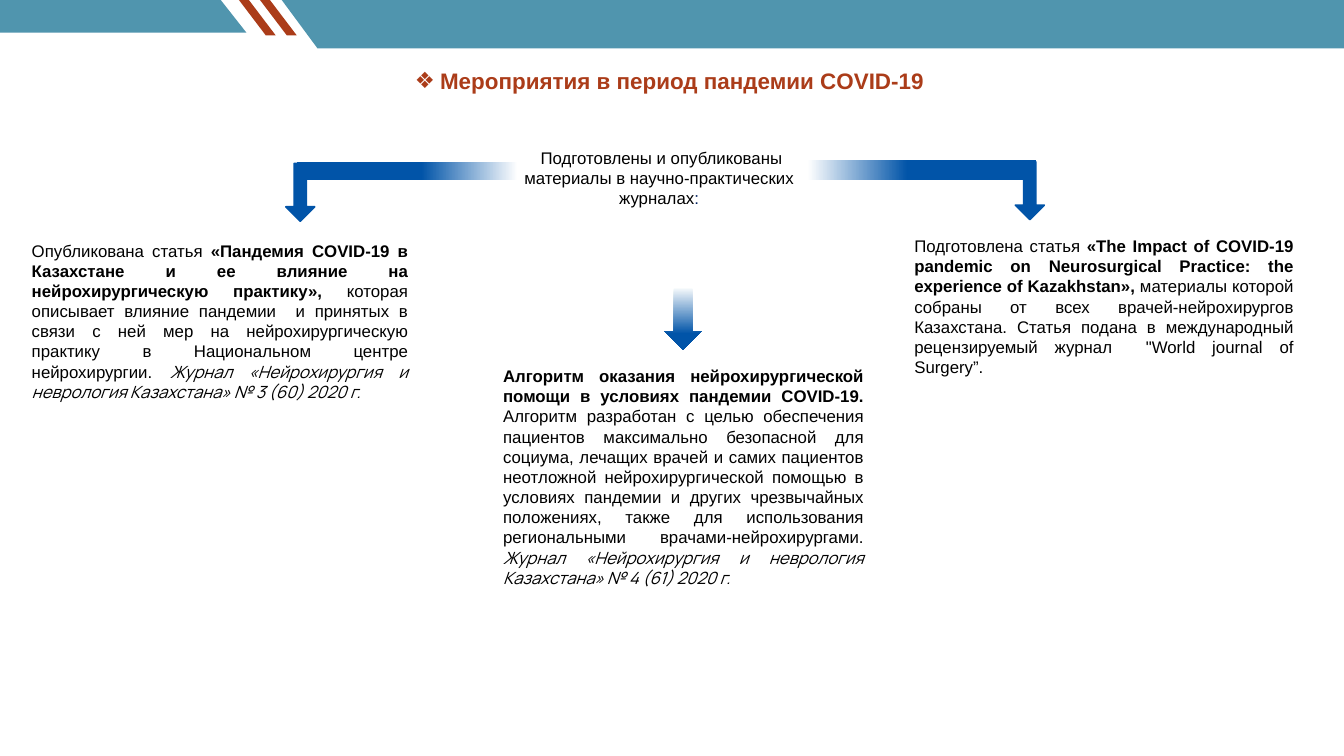
from lxml.etree import SubElement
from pptx import Presentation
from pptx.dml.color import RGBColor
from pptx.enum.shapes import MSO_SHAPE
from pptx.enum.text import MSO_ANCHOR, MSO_AUTO_SIZE, PP_ALIGN
from pptx.oxml.ns import qn
from pptx.util import Cm, Pt

TEAL, RUST, BLUE, WHITE, BLACK = "5095AE", "AB3C19", "0154A8", "FFFFFF", "000000"


def paint(shape, color=None, stops=(), angle=0, line=None):
    shape.shadow.inherit = False
    if stops:
        shape.fill.gradient()
        shape.fill.gradient_angle = -angle % 360
        stop_list = shape.element.spPr.find(qn("a:gradFill")).find(qn("a:gsLst"))
        for stop in list(stop_list):
            stop_list.remove(stop)
        for position, stop_color in stops:
            stop = SubElement(stop_list, qn("a:gs"), pos=str(position * 1000))
            SubElement(stop, qn("a:srgbClr"), val=stop_color)
    else:
        shape.fill.solid()
        shape.fill.fore_color.rgb = RGBColor.from_string(color)
    if line:
        shape.line.color.rgb = RGBColor.from_string(line)
        shape.line.width = Pt(2.25)
    else:
        shape.line.fill.background()


def add_run(paragraph, text, font="Arial", size=24, color=BLACK, bold=False, italic=False):
    run = paragraph.add_run()
    run.text = text
    run.font.name = font
    run.font.size = Pt(size)
    run.font.bold = bold
    run.font.italic = italic
    run.font.color.rgb = RGBColor.from_string(color)


presentation = Presentation()
presentation.slide_width = Cm(67.72)
presentation.slide_height = Cm(38.1)
slide = presentation.slides.add_slide(presentation.slide_layouts[5])
shapes = slide.shapes

header_parts = [
    (TEAL, [(67.72, -0.13), (14.1, -0.13), (16, 2.44), (67.72, 2.44)]),
    (TEAL, [(11.02, -0.13), (0, -0.13), (0, 1.65), (12.42, 1.65)]),
]
for left in (12.04, 13.1):
    header_parts.append((RUST, [(left + 0.5, 0), (left, 0), (left + 1.35, 1.78), (left + 1.85, 1.78)]))
for color, points in header_parts:
    corners = [(Cm(x), Cm(y)) for x, y in points]
    builder = shapes.build_freeform(*corners[0])
    builder.add_line_segments(corners[1:], close=True)
    paint(builder.convert_to_shape(), color)

title = shapes.title
title.left, title.top, title.width, title.height = Cm(20.55), Cm(3.25), Cm(26.37), Cm(1.63)
title.text_frame.word_wrap = False
title.text_frame.auto_size = MSO_AUTO_SIZE.NONE
title.text_frame.vertical_anchor = MSO_ANCHOR.TOP
paragraph = title.text_frame.paragraphs[0]
paragraph.alignment = PP_ALIGN.CENTER
properties = paragraph._p.get_or_add_pPr()
properties.set("marL", str(Cm(1.27)))
properties.set("indent", str(Cm(-1.27)))
SubElement(properties, qn("a:buFont"), typeface="Arial")
SubElement(properties, qn("a:buChar"), char="❖")
add_run(paragraph, "Мероприятия в период пандемии COVID-19", size=32, color=RUST, bold=True)

left_arrow = shapes.add_shape(MSO_SHAPE.BENT_UP_ARROW, Cm(14.4), Cm(8.23), Cm(5.38), Cm(2.92))
left_arrow.rotation = 180
right_arrow = shapes.add_shape(MSO_SHAPE.BENT_UP_ARROW, Cm(47.24), Cm(8.15), Cm(5.38), Cm(2.92))
right_arrow.element.spPr.find(qn("a:xfrm")).set("flipV", "1")
for arrow in (left_arrow, right_arrow):
    arrow.adjustments[0] = 0.21
    paint(arrow, BLUE, line=BLUE)

fade = [(0, BLUE), (40, BLUE), (71, WHITE)]
reversed_fade = [(100 - position, color) for position, color in reversed(fade)]
left_bar = shapes.add_shape(MSO_SHAPE.RECTANGLE, Cm(14.96), Cm(8.15), Cm(15.67), Cm(0.91))
paint(left_bar, stops=fade)
right_bar = shapes.add_shape(MSO_SHAPE.RECTANGLE, Cm(36), Cm(8.08), Cm(16.2), Cm(0.99))
paint(right_bar, stops=reversed_fade)
down_arrow = shapes.add_shape(MSO_SHAPE.DOWN_ARROW, Cm(33.48), Cm(14.53), Cm(1.88), Cm(3.1))
paint(down_arrow, stops=[(0, "F5F9FB"), (74, BLUE), (100, BLUE)], angle=90)

bold = {"bold": True}
journal = {"font": "Manrope", "italic": True}
text_boxes = [
    ((1.35, 11.99, 19.46, 12.9), PP_ALIGN.JUSTIFY, [
        ("Опубликована статья ", {}),
        ("«Пандемия COVID-19 в Казахстане и ее влияние на нейрохирургическую практику», ", bold),
        ("которая описывает влияние пандемии  и принятых в связи с ней мер на "
         "нейрохирургическую практику в Национальном центре нейрохирургии. ", {}),
        ("Журнал «Нейрохирургия и неврология Казахстана» № 3 (60) 2020 г.", journal),
    ]),
    ((25.1, 18.31, 18.67, 12.57), PP_ALIGN.JUSTIFY, [
        ("Алгоритм оказания нейрохирургической помощи в условиях пандемии COVID-19. ", bold),
        ("Алгоритм разработан с целью обеспечения пациентов максимально безопасной для социума, "
         "лечащих врачей и самих пациентов неотложной нейрохирургической помощью в условиях "
         "пандемии и других чрезвычайных положениях, также для использования региональными "
         "врачами-нейрохирургами. ", {}),
        ("Журнал «Нейрохирургия и неврология Казахстана» № 4 (61) 2020 г.", journal),
    ]),
    ((45.82, 11.76, 19.61, 8.03), PP_ALIGN.JUSTIFY, [
        ("Подготовлена статья ", {}),
        ("«The Impact of COVID-19 pandemic on Neurosurgical Practice: "
         "the experience of Kazakhstan», ", bold),
        ("материалы которой собраны от всех врачей-нейрохирургов Казахстана. Статья подана в "
         "международный рецензируемый журнал  \"World journal of Surgery”.", {}),
    ]),
    ((26.06, 7.32, 14.53, 3.33), PP_ALIGN.CENTER, [
        ("Подготовлены и опубликованы материалы в научно-практических  журналах", {}),
        (": ", {"color": "002060"}),
    ]),
]
for box, alignment, runs in text_boxes:
    text_frame = shapes.add_textbox(*[Cm(length) for length in box]).text_frame
    text_frame.word_wrap = True
    paragraph = text_frame.paragraphs[0]
    paragraph.alignment = alignment
    paragraph.line_spacing = Pt(28.8)
    for text, text_format in runs:
        add_run(paragraph, text, **text_format)

presentation.save("out.pptx")
